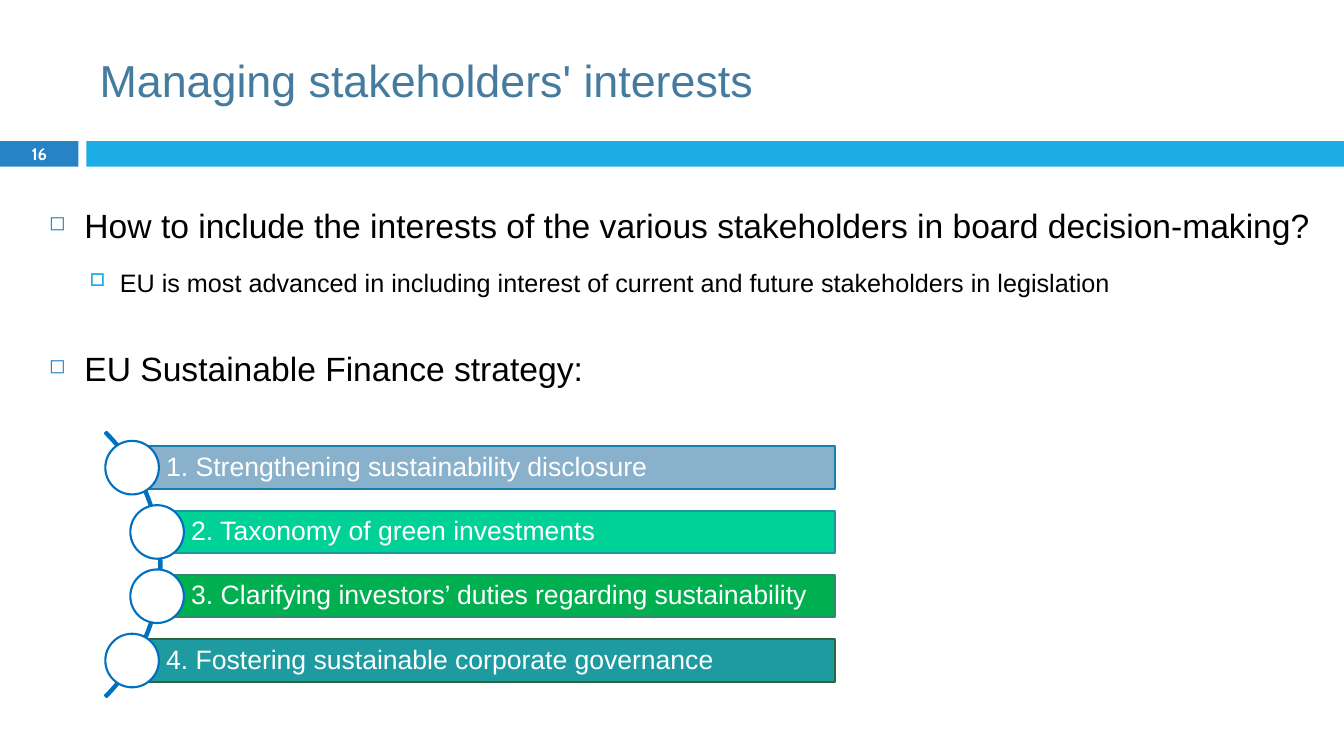
from lxml.etree import SubElement
from pptx import Presentation
from pptx.dml.color import RGBColor
from pptx.enum.shapes import MSO_SHAPE as Shape
from pptx.enum.text import MSO_ANCHOR as Anchor, PP_ALIGN as Align
from pptx.oxml.ns import qn
from pptx.util import Cm, Pt

BLUE, SKY, LINE, WHITE = "2683C6", "1CADE4", "0070C0", "FFFFFF"

# Bars of the list: text, left edge, fill, outline
STRATEGY = [
    ("1. Strengthening sustainability disclosure", 3.33, "89B1CB", "1580A9"),
    ("2. Taxonomy of green investments", 3.96, "00D297", "1D989F"),
    ("3. Clarifying investors’ duties regarding sustainability", 3.96, "00B050", "318A70"),
    ("4. Fostering sustainable corporate governance", 3.33, "1D9BA1", "2E653D"),
]
BAR_TOP, BAR_PITCH, BAR_HEIGHT, BAR_RIGHT = 11.25, 1.62, 1.07, 21.04
CIRCLE = 1.35

# Bullet levels: size, margin, hanging indent, character, colour, percent
LEVELS = [
    (24, 0.89, -0.89, "◻", BLUE, 60),
    (18, 1.78, -0.76, "□", SKY, 70),
]
# Body paragraphs: text, level, space before
BODY = [
    ("How to include the interests of the various stakeholders in board decision-making?", 0, 7),
    ("EU is most advanced in including interest of current and future stakeholders in legislation", 1, 5.5),
    ("EU Sustainable Finance strategy:", 0, 21),
]


def color(hex_string):
    return RGBColor.from_string(hex_string)


def set_all(target, values):
    for name, value in values.items():
        setattr(target, name, value)


def add_shape(slide, kind, left, top, width, height, fill=None, line=None):
    shape = slide.shapes.add_shape(kind, Cm(left), Cm(top), Cm(width), Cm(height))
    shape.shadow.inherit = False
    if fill:
        shape.fill.solid()
        shape.fill.fore_color.rgb = color(fill)
    else:
        shape.fill.background()
    if line:
        shape.line.color.rgb = color(line)
        shape.line.width = Pt(1.5)
    else:
        shape.line.fill.background()
    return shape


def add_text_box(slide, left, top, width, height, anchor):
    box = slide.shapes.add_textbox(Cm(left), Cm(top), Cm(width), Cm(height))
    set_all(box.text_frame, {"word_wrap": True, "vertical_anchor": anchor})
    return box


def write(para, text, size, hex_string, font="Arial", bold=False, **layout):
    set_all(para, layout)
    span = para.add_run()
    span.text = text
    set_all(span.font, {"size": Pt(size), "name": font, "bold": bold})
    span.font.color.rgb = color(hex_string)


def add_bullet(para, margin, indent, char, hex_string, percent):
    props = para._p.get_or_add_pPr()
    props.set("marL", str(Cm(margin)))
    props.set("indent", str(Cm(indent)))
    bullet_color = SubElement(props, qn("a:buClr"))
    SubElement(bullet_color, qn("a:srgbClr"), val=hex_string)
    SubElement(props, qn("a:buSzPct"), val=str(percent * 1000))
    SubElement(props, qn("a:buChar"), char=char)


def add_header(slide):
    number = add_shape(slide, Shape.RECTANGLE, 0, 3.56, 1.98, 0.64, BLUE)
    set_all(number.text_frame, {"vertical_anchor": Anchor.MIDDLE, "margin_top": 0, "margin_bottom": 0})
    write(number.text_frame.paragraphs[0], "16", 11.9, WHITE, "Cabin", True, alignment=Align.CENTER)
    add_shape(slide, Shape.RECTANGLE, 2.18, 3.56, 31.69, 0.64, SKY)
    title = add_text_box(slide, 2.26, 0.64, 30.2, 2.74, Anchor.MIDDLE)
    write(title.text_frame.paragraphs[0], "Managing stakeholders' interests", 32, "457B9E")


def add_body(slide):
    frame = add_text_box(slide, 0.99, 4.52, 32.54, 13.69, Anchor.TOP).text_frame
    for index, (text, level, before) in enumerate(BODY):
        para = frame.add_paragraph() if index else frame.paragraphs[0]
        size, *bullet = LEVELS[level]
        write(para, text, size, "000000", level=level, line_spacing=1.5, space_before=Pt(before))
        add_bullet(para, *bullet)


def add_strategy_bar(slide, top, text, left, fill, line):
    bar = add_shape(slide, Shape.RECTANGLE, left, top, BAR_RIGHT - left, BAR_HEIGHT, fill, line)
    set_all(bar.text_frame, {
        "word_wrap": True, "vertical_anchor": Anchor.MIDDLE, "margin_left": Cm(0.86),
        "margin_right": Cm(0.13), "margin_top": Cm(0.13), "margin_bottom": Cm(0.13),
    })
    write(bar.text_frame.paragraphs[0], text, 19, WHITE, alignment=Align.LEFT, line_spacing=0.9)
    # The circle is centred on the left edge of its bar
    add_shape(slide, Shape.OVAL, left - CIRCLE / 2, top + (BAR_HEIGHT - CIRCLE) / 2,
              CIRCLE, CIRCLE, WHITE, LINE)


def add_strategy_list(slide):
    arc = add_shape(slide, Shape.BLOCK_ARC, -5.38, 9.5, 9.45, 9.45, line=LINE)
    for index, value in enumerate((189, 27, 0.006)):
        arc.adjustments[index] = value
    for row, item in enumerate(STRATEGY):
        add_strategy_bar(slide, BAR_TOP + row * BAR_PITCH, *item)


def main():
    deck = Presentation()
    set_all(deck, {"slide_width": Cm(33.87), "slide_height": Cm(19.05)})
    page = deck.slides.add_slide(deck.slide_layouts[6])
    add_header(page)
    add_body(page)
    add_strategy_list(page)
    deck.save("out.pptx")


if __name__ == "__main__":
    main()
